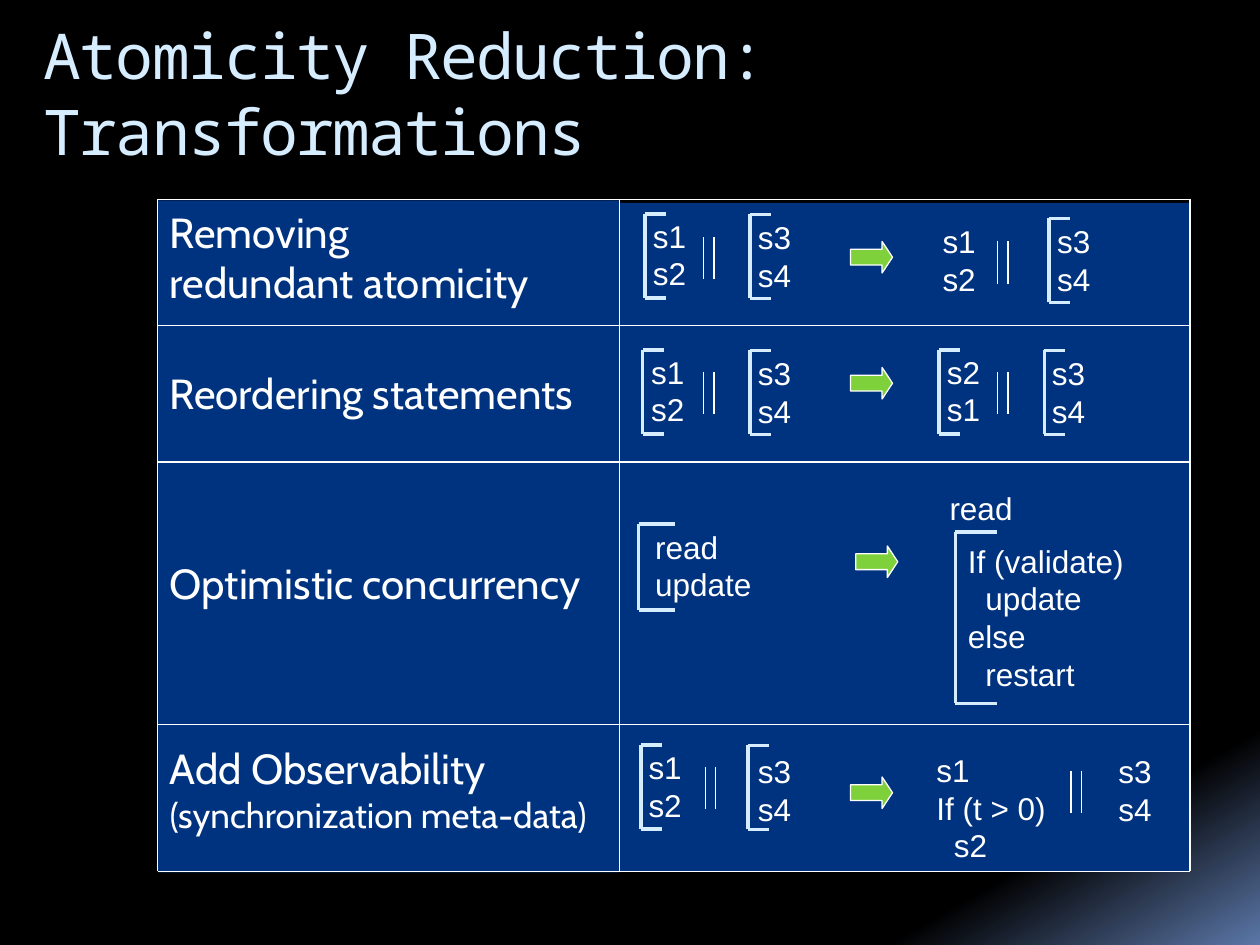
from pptx import Presentation
from pptx import util as u
from pptx.dml.color import RGBColor
from pptx.enum import shapes, text
from pptx.oxml.ns import qn
from lxml import etree

WHITE, PALE, NAVY, GREEN = "FFFFFF", "D6ECFF", "00337F", "7FD13B"

# Table rules
COLS = (90, 354, 680)
ROWS = (114, 186, 264, 414, 498)

# Left cells: top, height, top margin, (words, size) per line
LABELS = [
    (114.5, 93, 3.6, [("Removing", 24), ("redundant atomicity", 24)]),
    (206.5, 80, 3.6, [("Reordering statements", 24)]),
    (286, 107, 32.5, [("Optimistic concurrency", 24)]),
    (392.5, 106, 32, [("Add Observability", 24),
                      ("(synchronization meta-data)", 20)]),
]
# Right cells: top, height
CELLS = [(116, 94), (209, 80), (288, 106), (391, 107)]

# Code: left, top, width, lines; a leading ">" marks an indented line
CODE = [
    (366, 120.25, 34, "s1 s2"), (426, 121, 34, "s3 s4"),
    (531.5, 123.5, 34, "s1 s2"), (597, 123.5, 34, "s3 s4"),
    (365, 198, 34, "s1 s2"), (426, 198.75, 34, "s3 s4"),
    (534, 198, 34, "s2 s1"), (594, 198.75, 34, "s3 s4"),
    (367.25, 298, 70, "read update"), (535.5, 276, 54, "read"),
    (546, 306, 109, ["If (validate)", ">update", "else", ">restart"]),
    (363.5, 424, 34, "s1 s2"), (426, 426.25, 34, "s3 s4"),
    (528, 425.5, 77, ["s1", "If (t > 0)", ">s2"]),
    (632, 426.25, 34, "s3 s4"),
]
# Atomic brackets: left, top, width, height
SMALL = (12, 48)
BRACKETS = [
    (368.5, 122.25, *SMALL), (428.5, 122.5, *SMALL), (599.5, 124.75, *SMALL),
    (367.25, 200, *SMALL), (428.5, 200.25, *SMALL),
    (536.5, 200, *SMALL), (596.75, 200.25, *SMALL),
    (365, 299.5, 21, 49), (546, 304, 24, 98),
    (366.25, 425.75, *SMALL), (427.5, 426, *SMALL),
]
BARS = [(402, 135.5), (570, 138), (402, 212.5), (570, 212.5),
        (403, 438.5), (612, 440.5)]
ARROWS = [(486, 138), (486, 210), (489, 312), (486, 444)]


def tint(code):
    return RGBColor.from_string(code)


def pts(*nums):
    return [u.Pt(n) for n in nums]


def style(para, size, font, color):
    for run in para.runs:
        run.font.size = u.Pt(size)
        run.font.name = font
        run.font.color.rgb = tint(color)


def line(slide, x1, y1, x2, y2, color, width):
    rule = slide.shapes.add_connector(
        shapes.MSO_CONNECTOR.STRAIGHT, *pts(x1, y1, x2, y2))
    rule.line.color.rgb = tint(color)
    rule.line.width = u.Pt(width)
    etree.SubElement(rule._element.spPr, qn("a:effectLst"))


def solid(slide, kind, box, fill, edge=None):
    shape = slide.shapes.add_shape(kind, *pts(*box))
    shape.shadow.inherit = False
    shape.fill.solid()
    shape.fill.fore_color.rgb = tint(fill)
    if edge:
        shape.line.color.rgb = tint(edge)
        shape.line.width = u.Pt(0.75)
    else:
        shape.line.fill.background()
    return shape


def cell(slide, x, y, w, h, top=3.6, words=()):
    rect = solid(slide, shapes.MSO_SHAPE.RECTANGLE, (x, y, w, h), NAVY)
    frame = rect.text_frame
    frame.vertical_anchor = text.MSO_ANCHOR.TOP
    frame.margin_top = u.Pt(top)
    frame.text = "\n".join(word for word, _ in words)
    for para, (_, size) in zip(frame.paragraphs, words):
        para.alignment = text.PP_ALIGN.LEFT
        style(para, size, "Cabin", WHITE)


def code(slide, x, y, w, lines):
    if isinstance(lines, str):
        lines = lines.split()
    box = slide.shapes.add_textbox(*pts(x, y, w, 7.2 + 21.6 * len(lines)))
    frame = box.text_frame
    frame.word_wrap = False
    frame.auto_size = text.MSO_AUTO_SIZE.SHAPE_TO_FIT_TEXT
    frame.text = "\n".join(item.lstrip(">") for item in lines)
    for para, item in zip(frame.paragraphs, lines):
        style(para, 18, "Arial", WHITE)
        if item.startswith(">"):
            para._p.get_or_add_pPr().set("marL", str(u.Pt(10)))


def bracket(slide, x, y, w, h):
    line(slide, x, y + h, x, y, PALE, 2)
    for edge in (y, y + h):
        line(slide, x, edge, x + w, edge, PALE, 2)


def bars(slide, x, y):
    for left in (x, x + 6):
        line(slide, left, y, left, y + 24, WHITE, 0.75)


def arrow(slide, x, y):
    shape = solid(slide, shapes.MSO_SHAPE.RIGHT_ARROW,
                  (x, y, 24, 18), GREEN, WHITE)
    shape.adjustments[1] = 0.33


def title(slide, words):
    box = slide.shapes.add_textbox(*pts(18, 6, 702, 90))
    frame = box.text_frame
    frame.word_wrap = True
    frame.text = words
    para = frame.paragraphs[0]
    style(para, 36, "Noto Sans Mono", PALE)
    para.runs[0].font._element.set("spc", "-100")


def backdrop(slide):
    fill = slide.background.fill
    fill.gradient()
    fill.gradient_angle = 300
    for stop, place, color in zip(fill.gradient_stops, (0.87, 1),
                                  ("000000", "5B77A8")):
        stop.position = place
        stop.color.rgb = tint(color)


def main():
    deck = Presentation()
    deck.slide_width, deck.slide_height = pts(720, 540)
    slide = deck.slides.add_slide(deck.slide_layouts[6])
    backdrop(slide)
    title(slide, "Atomicity Reduction: Transformations")

    # Cells and rules
    left, mid, right = COLS
    for (y, h, top, words), (y2, h2) in zip(LABELS, CELLS):
        cell(slide, left, y, mid - left, h, top, words)
        cell(slide, mid, y2, right - mid, h2)
    for x in COLS:
        line(slide, x, ROWS[0], x, ROWS[-1], WHITE, 1)
    for y in ROWS:
        line(slide, left, y, right, y, WHITE, 1)

    # Program fragments
    for draw, items in ((arrow, ARROWS), (bracket, BRACKETS),
                        (bars, BARS), (code, CODE)):
        for item in items:
            draw(slide, *item)
    deck.save("out.pptx")


if __name__ == "__main__":
    main()
